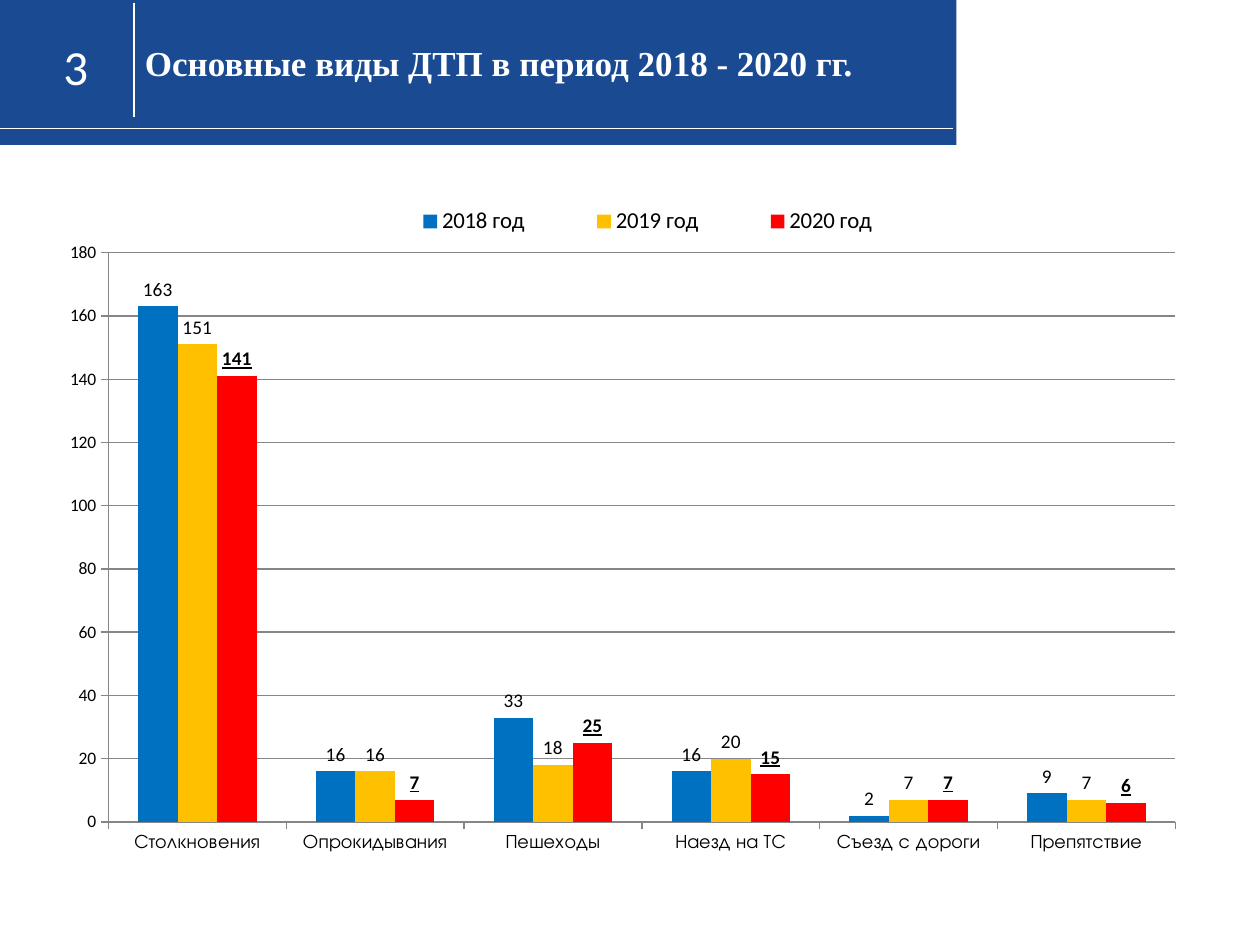
from dataclasses import dataclass

from lxml.etree import SubElement
from pptx import Presentation
from pptx.chart.data import CategoryChartData as ChartData
from pptx.dml.color import RGBColor
from pptx.enum.chart import XL_CHART_TYPE as ChartType
from pptx.enum.chart import XL_LABEL_POSITION as LabelPosition
from pptx.enum.chart import XL_LEGEND_POSITION as LegendPosition
from pptx.enum.chart import XL_TICK_MARK as TickMark
from pptx.enum.shapes import MSO_CONNECTOR as Connector
from pptx.enum.shapes import MSO_SHAPE as Shape
from pptx.enum.text import MSO_ANCHOR as Anchor
from pptx.enum.text import MSO_AUTO_SIZE as AutoSize
from pptx.enum.text import PP_ALIGN as Align
from pptx.oxml import parse_xml
from pptx.oxml.ns import nsdecls, qn
from pptx.slide import Slide
from pptx.util import Pt

NAVY = RGBColor(0x1A, 0x4B, 0x92)
WHITE = RGBColor(0xFF, 0xFF, 0xFF)
BLACK = RGBColor(0, 0, 0)
GRAY = RGBColor(0x86, 0x86, 0x86)
BLUE = RGBColor(0x00, 0x70, 0xC0)
AMBER = RGBColor(0xFF, 0xC0, 0x00)
RED = RGBColor(0xFF, 0, 0)

ACCIDENT_TYPES = ["Столкновения", "Опрокидывания", "Пешеходы",
                  "Наезд на ТС", "Съезд с дороги", "Препятствие"]
YEARS = [
    ("2018 год", BLUE, [163, 16, 33, 16, 2, 9]),
    ("2019 год", AMBER, [151, 16, 18, 20, 7, 7]),
    ("2020 год", RED, [141, 7, 25, 15, 7, 6]),
]


def manual_layout(x, y, width, height, inner=False):
    """Return a chart layout element given in fractions of the chart."""
    target = '<c:layoutTarget val="inner"/>' if inner else ""
    return parse_xml(
        f'<c:layout {nsdecls("c")}><c:manualLayout>{target}'
        '<c:xMode val="edge"/><c:yMode val="edge"/>'
        f'<c:x val="{x}"/><c:y val="{y}"/><c:w val="{width}"/><c:h val="{height}"/>'
        '</c:manualLayout></c:layout>')


@dataclass
class SlideBuilder:
    """Hold the current slide and its style, and add elements in points."""
    slide: Slide
    body_font: str = "Calibri"
    title_font: str = "Times New Roman"
    category_font: str = "TeX Gyre Adventor"

    def band(self, left, top, width, height):
        """Add the filled header band."""
        band = self.slide.shapes.add_shape(
            Shape.RECTANGLE, Pt(left), Pt(top), Pt(width), Pt(height))
        band.shadow.inherit = False
        band.fill.solid()
        band.fill.fore_color.rgb = NAVY
        band.line.fill.background()

    def rule(self, x1, y1, x2, y2):
        """Add a thin white line."""
        rule = self.slide.shapes.add_connector(
            Connector.STRAIGHT, Pt(x1), Pt(y1), Pt(x2), Pt(y2))
        rule.line.color.rgb = WHITE
        rule.line.width = Pt(1)
        SubElement(rule._element.spPr, qn("a:effectLst"))

    def set_text(self, shape, text, size, font, bold, align):
        """Fill a shape with one white paragraph."""
        frame = shape.text_frame
        frame.text = text
        frame.word_wrap = True
        frame.auto_size = AutoSize.NONE
        frame.vertical_anchor = Anchor.MIDDLE
        paragraph = frame.paragraphs[0]
        paragraph.alignment = align
        paragraph.font.name = font
        paragraph.font.size = Pt(size)
        paragraph.font.bold = bold
        paragraph.font.color.rgb = WHITE

    def page_number(self, text, left, top, width, height):
        """Add the page number."""
        number = self.slide.shapes.add_textbox(Pt(left), Pt(top), Pt(width), Pt(height))
        self.set_text(number, text, 28, self.body_font, False, Align.RIGHT)

    def title(self, text, left, top, width, height):
        """Place the title in front of the header band."""
        title = self.slide.shapes.title
        title.left, title.top = Pt(left), Pt(top)
        title.width, title.height = Pt(width), Pt(height)
        self.set_text(title, text, 20, self.title_font, True, Align.LEFT)
        self.slide.shapes._spTree.append(title._element)

    def column_chart(self, categories, series, left, top, width, height):
        """Add the clustered column chart with its legend on top."""
        data = ChartData()
        data.categories = categories
        for name, _, values in series:
            data.add_series(name, values)
        chart = self.slide.shapes.add_chart(
            ChartType.COLUMN_CLUSTERED, Pt(left), Pt(top), Pt(width), Pt(height), data).chart
        chart.has_title = False
        chart.font.name = self.body_font
        chart.font.size = Pt(10)
        chart.font.color.rgb = BLACK

        plot = chart.plots[0]
        plot.vary_by_categories = False
        plot.gap_width = 150
        plot.overlap = 0
        for column, (name, color, _) in zip(plot.series, series):
            column.format.fill.solid()
            column.format.fill.fore_color.rgb = color
            latest = name == series[-1][0]
            labels = column.data_labels
            labels.show_value = True
            labels.position = LabelPosition.OUTSIDE_END
            labels.font.size = Pt(11)
            labels.font.bold = latest
            labels.font.underline = latest

        for axis in (chart.category_axis, chart.value_axis):
            axis.major_tick_mark = TickMark.OUTSIDE
            axis.minor_tick_mark = TickMark.NONE
            axis.format.line.color.rgb = GRAY
        chart.category_axis.tick_labels.font.name = self.category_font
        chart.category_axis.tick_labels.font.size = Pt(11)
        scale = chart.value_axis
        scale.minimum_scale, scale.maximum_scale, scale.major_unit = 0, 180, 20
        scale.has_major_gridlines = True
        scale.major_gridlines.format.line.color.rgb = GRAY

        chart.has_legend = True
        legend = chart.legend
        legend.position = LegendPosition.RIGHT
        legend.include_in_layout = False
        legend.font.size = Pt(13)
        legend._element.find(qn("c:legendPos")).addnext(
            manual_layout(0.27, 0.03, 0.51, 0.07))
        plot_area = chart._chartSpace.chart.plotArea
        for layout in plot_area.findall(qn("c:layout")):
            plot_area.remove(layout)
        plot_area.insert(0, manual_layout(0.05, 0.11, 0.94, 0.82, inner=True))


def main():
    """Build the slide on accident types and save it."""
    deck = Presentation()
    deck.slide_width, deck.slide_height = Pt(720), Pt(540)
    builder = SlideBuilder(deck.slides.add_slide(deck.slide_layouts[5]))
    builder.band(0, 0, 546.5, 82.8)
    builder.rule(76.5, 1.5, 76.5, 67)
    builder.rule(0, 73.5, 544.5, 73.5)
    builder.page_number("3", 8.5, 15, 49, 45.5)
    builder.title("Основные виды ДТП в период 2018 - 2020 гг.", 75.6, 19.5, 481.5, 32)
    builder.column_chart(ACCIDENT_TYPES, YEARS, 29.5, 100.8, 648.7, 396.7)
    deck.save("out.pptx")


if __name__ == "__main__":
    main()
